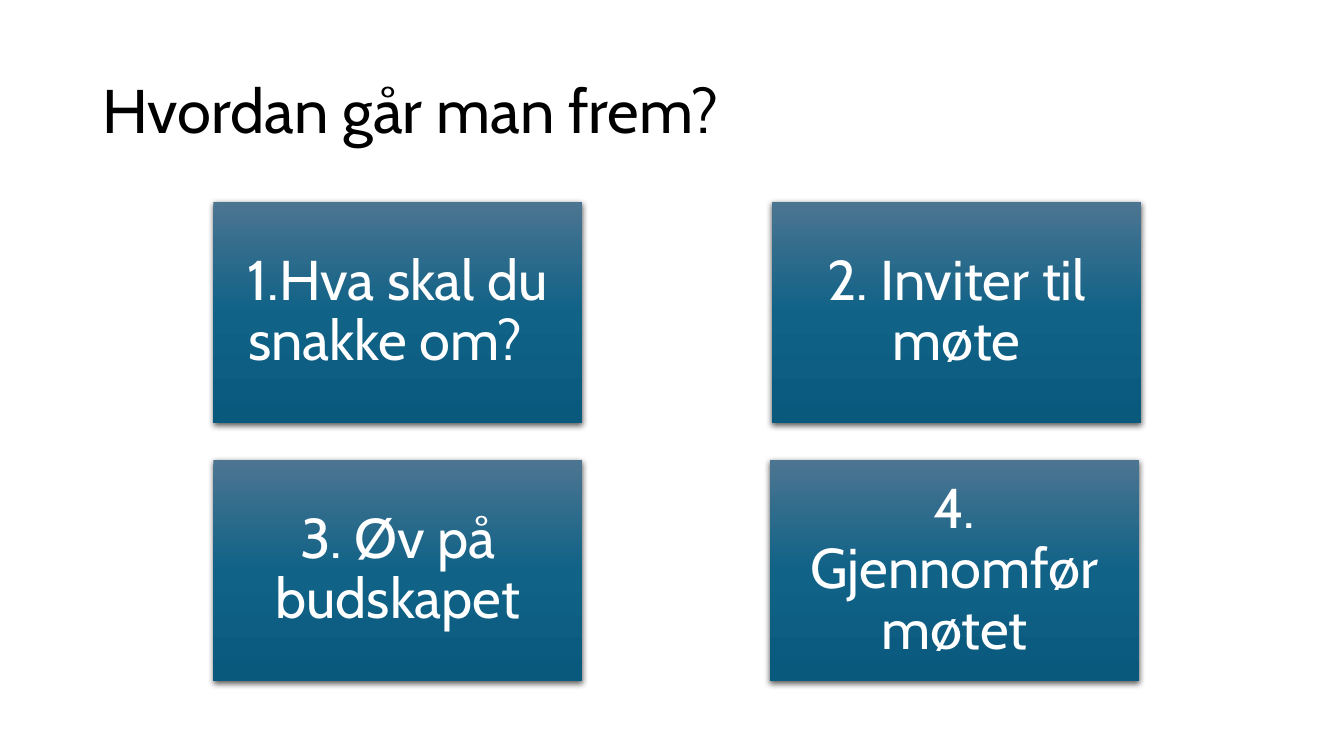
from copy import deepcopy
from dataclasses import dataclass

from lxml import etree
from pptx import Presentation
from pptx.dml.color import RGBColor
from pptx.enum import shapes, text
from pptx.oxml import ns
from pptx.util import Pt


@dataclass(frozen=True)
class Theme:
    font: str = "Cabin"
    title_size: int = 44
    step_size: int = 40
    title_color: str = "000000"
    step_color: str = "FFFFFF"
    gradient: tuple = ((0, "4C7591"), (0.5, "106287"), (1, "09597D"))
    shadow_color: str = "000000"
    line_spacing: float = 0.9


THEME = Theme()
STEPS = (
    "1.Hva skal du snakke om?  ",
    "2. Inviter til møte",
    "3. Øv på budskapet",
    "4. Gjennomfør møtet",
)


def write(frame, wording, size, color, align):
    frame.word_wrap = True
    frame.vertical_anchor = text.MSO_ANCHOR.MIDDLE
    paragraph = frame.paragraphs[0]
    paragraph.alignment = align
    paragraph.line_spacing = THEME.line_spacing
    run = paragraph.add_run()
    run.text = wording
    run.font.name = THEME.font
    run.font.size = Pt(size)
    run.font.color.rgb = RGBColor.from_string(color)


def fill_gradient(card):
    card.fill.gradient()
    card.fill.gradient_angle = 270
    first_stop = card._element.spPr.find(".//" + ns.qn("a:gs"))
    first_stop.addnext(deepcopy(first_stop))
    for stop, (position, color) in zip(card.fill.gradient_stops, THEME.gradient):
        stop.position = position
        stop.color.rgb = RGBColor.from_string(color)


def cast_shadow(card):
    card.shadow.inherit = False
    effects = card._element.spPr.find(ns.qn("a:effectLst"))
    shadow = etree.SubElement(
        effects, ns.qn("a:outerShdw"), blurRad=str(Pt(4.5)), dist=str(Pt(1.5)),
        dir="5400000", algn="ctr", rotWithShape="0")
    color = etree.SubElement(shadow, ns.qn("a:srgbClr"), val=THEME.shadow_color)
    etree.SubElement(color, ns.qn("a:alpha"), val="63000")


def place_title(slide, left, top, width, height):
    title = slide.shapes.title
    title.left, title.top = Pt(left), Pt(top)
    title.width, title.height = Pt(width), Pt(height)
    write(title.text_frame, "Hvordan går man frem?", THEME.title_size,
          THEME.title_color, text.PP_ALIGN.LEFT)


def add_step(slide, wording, left, top, width, height):
    card = slide.shapes.add_shape(
        shapes.MSO_SHAPE.RECTANGLE, Pt(left), Pt(top), Pt(width), Pt(height))
    fill_gradient(card)
    card.line.fill.background()
    cast_shadow(card)
    frame = card.text_frame
    frame.margin_left = frame.margin_right = Pt(12)
    frame.margin_top = frame.margin_bottom = Pt(12)
    write(frame, wording, THEME.step_size, THEME.step_color, text.PP_ALIGN.CENTER)


def add_steps(slide, left, top, width, height):
    card_width, card_height, lower_shift = 263.5, 158, 1.5
    for index, wording in enumerate(STEPS):
        row, column = divmod(index, 2)
        x = left + column * (width - card_width - row * lower_shift)
        y = top + row * (height - card_height)
        add_step(slide, wording, x, y, card_width, card_height)


def main():
    deck = Presentation()
    deck.slide_width, deck.slide_height = Pt(960), Pt(540)
    slide = deck.slides.add_slide(deck.slide_layouts.get_by_name("Title Only"))
    place_title(slide, 66, 29, 828, 104)
    add_steps(slide, 152.5, 144, 662.5, 342.5)
    deck.save("out.pptx")


if __name__ == "__main__":
    main()
